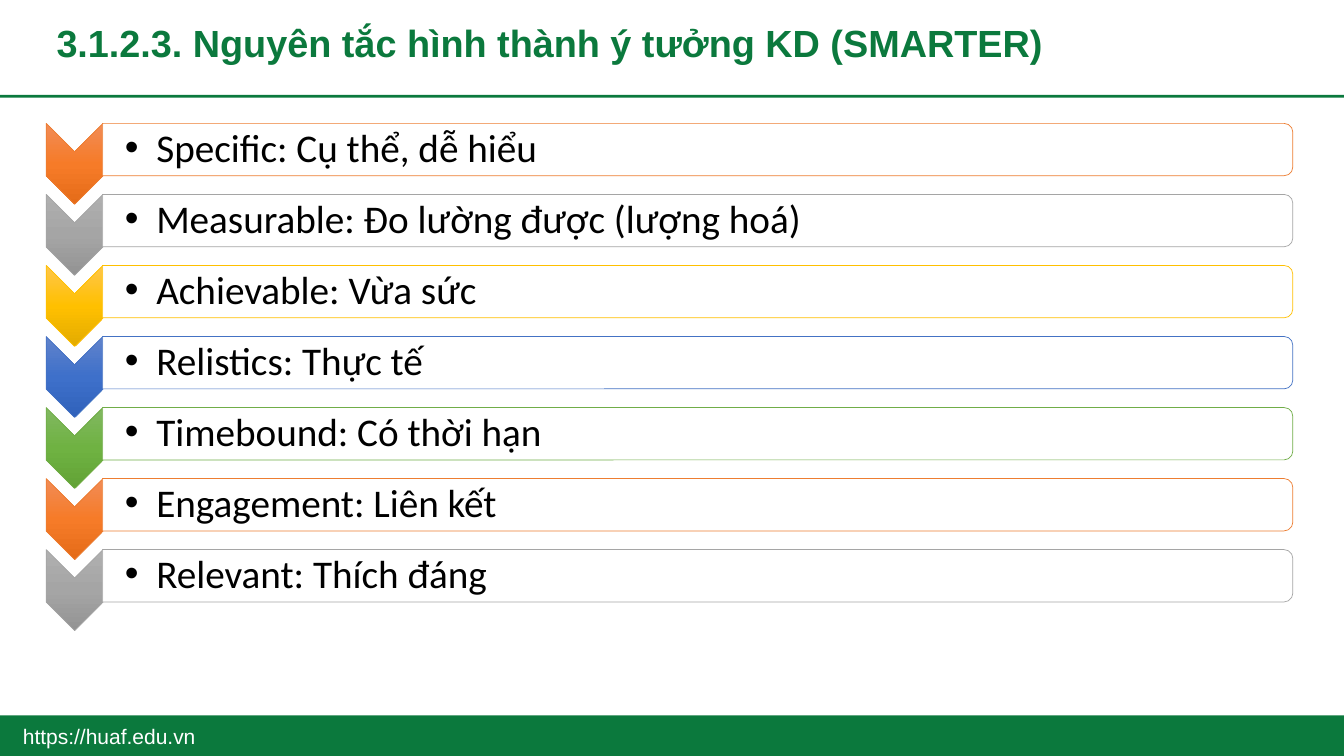
from lxml import etree
from pptx import Presentation
from pptx import util as u
from pptx.dml.color import RGBColor
from pptx.enum import shapes, text
from pptx.oxml import ns

COLOURS = {
    "green": "0B793D", "white": "FFFFFF", "black": "000000",
    "orange_line": "ED7D31", "grey_line": "A5A5A5", "gold_line": "FFC000",
    "blue_line": "4472C4", "leaf_line": "70AD47",
}
GRADIENTS = {
    "orange": ("F18C57", "F67B28", "E56C19"),
    "grey": ("AFAFAF", "A5A5A5", "939393"),
    "gold": ("FFC64B", "FFC000", "E3AB00"),
    "blue": ("6183CB", "3E70CA", "3062BB"),
    "leaf": ("81B861", "6FB242", "62A336"),
}
PRINCIPLES = [
    "Specific: Cụ thể, dễ hiểu",
    "Measurable: Đo lường được (lượng hoá)",
    "Achievable: Vừa sức",
    "Relistics: Thực tế",
    "Timebound: Có thời hạn",
    "Engagement: Liên kết",
    "Relevant: Thích đáng",
]
ROW_PITCH = 1.79


def colour(name):
    return RGBColor.from_string(COLOURS[name])


def assign(target, values):
    for name, value in values.items():
        setattr(target, name, value)


def element(parent, tag, **attributes):
    return etree.SubElement(parent, ns.qn(tag), attributes)


class SlideBuilder:
    heading_font = "Arial"
    body_font = "Calibri"

    def __init__(self, page):
        self.page = page

    def put_text(self, box, words, font, ink, frame, para_format):
        body = box.text_frame
        assign(body, {"word_wrap": True, "auto_size": text.MSO_AUTO_SIZE.NONE, **frame})
        para = body.paragraphs[0]
        assign(para, para_format)
        span = para.add_run()
        span.text = words
        assign(span.font, font)
        span.font.color.rgb = colour(ink)
        return para

    def title(self, words, left, top, width, height):
        box = self.page.shapes.title
        assign(box, {"left": u.Cm(left), "top": u.Cm(top),
                     "width": u.Cm(width), "height": u.Cm(height)})
        self.put_text(box, words,
                      {"name": self.heading_font, "size": u.Pt(27), "bold": True}, "green",
                      {"vertical_anchor": text.MSO_ANCHOR.BOTTOM},
                      {"alignment": text.PP_ALIGN.LEFT, "line_spacing": 0.9})

    def text_box(self, left, top, width, height):
        return self.page.shapes.add_textbox(u.Cm(left), u.Cm(top), u.Cm(width), u.Cm(height))

    def band(self, top, height):
        shape = self.page.shapes.add_shape(
            shapes.MSO_SHAPE.RECTANGLE, 0, u.Cm(top), u.Cm(33.87), u.Cm(height))
        shape.shadow.inherit = False
        shape.fill.solid()
        shape.fill.fore_color.rgb = colour("green")
        shape.line.fill.background()

    def address(self, words):
        self.put_text(self.text_box(0, 18.03, 5.51, 1.02), words,
                      {"name": self.heading_font, "size": u.Pt(15)}, "white",
                      {"vertical_anchor": text.MSO_ANCHOR.MIDDLE},
                      {"alignment": text.PP_ALIGN.CENTER})

    def turned_shape(self, kind, centre_x, centre_y, width, height, line):
        shape = self.page.shapes.add_shape(
            kind, u.Cm(centre_x - width / 2), u.Cm(centre_y - height / 2),
            u.Cm(width), u.Cm(height))
        shape.rotation = 90
        shape.shadow.inherit = False
        shape.line.color.rgb = colour(line)
        shape.line.width = u.Pt(0.5)
        return shape

    def chevron(self, centre_y, hue):
        shape = self.turned_shape(
            shapes.MSO_SHAPE.CHEVRON, 1.88, centre_y, 2.04, 1.43, f"{hue}_line")
        shape.fill.gradient()
        gradient = shape._element.spPr.find(ns.qn("a:gradFill"))
        gradient.clear()
        gradient.set("rotWithShape", "0")
        stops = element(gradient, "a:gsLst")
        for place, value in zip((0, 50000, 100000), GRADIENTS[hue]):
            element(element(stops, "a:gs", pos=str(place)), "a:srgbClr", val=value)
        element(gradient, "a:lin", ang="5400000", scaled="0")

    def bar(self, centre_y, hue):
        shape = self.turned_shape(
            shapes.MSO_SHAPE.ROUND_2_SAME_RECTANGLE, 17.58, centre_y, 1.32, 30, f"{hue}_line")
        shape.fill.solid()
        shape.fill.fore_color.rgb = colour("white")
        tint = shape._element.spPr.find(ns.qn("a:solidFill"))[0]
        element(tint, "a:alpha", val="90000")

    def principle(self, centre_y, words):
        para = self.put_text(
            self.text_box(2.59, centre_y - 0.6, 29.95, 1.2), words,
            {"name": self.body_font, "size": u.Pt(28)}, "black",
            {"vertical_anchor": text.MSO_ANCHOR.MIDDLE, "margin_left": u.Cm(0.56),
             "margin_top": u.Cm(0.05), "margin_right": u.Cm(0.05), "margin_bottom": u.Cm(0.05)},
            {"level": 1, "line_spacing": 0.9, "space_after": u.Pt(4),
             "alignment": text.PP_ALIGN.LEFT})
        properties = para._p.get_or_add_pPr()
        indent = u.Cm(0.79)
        properties.set("marL", str(indent))
        properties.set("indent", str(-indent))
        element(properties, "a:buFont", typeface="Arial")
        element(properties, "a:buChar", char="•")


def main():
    deck = Presentation()
    assign(deck, {"slide_width": u.Cm(33.87), "slide_height": u.Cm(19.05)})
    builder = SlideBuilder(deck.slides.add_slide(deck.slide_layouts[5]))
    builder.band(18.03, 1.02)
    builder.band(2.39, 0.07)
    builder.address("https://huaf.edu.vn")
    builder.title("3.1.2.3. Nguyên tắc hình thành ý tưởng KD (SMARTER)", 1.17, 0.46, 31.42, 1.32)
    hues = list(GRADIENTS)
    for row, words in enumerate(PRINCIPLES):
        hue = hues[row % len(hues)]
        middle = 3.77 + row * ROW_PITCH
        builder.chevron(middle + 0.36, hue)
        builder.bar(middle, hue)
        builder.principle(middle, words)
    deck.save("out.pptx")


if __name__ == "__main__":
    main()
